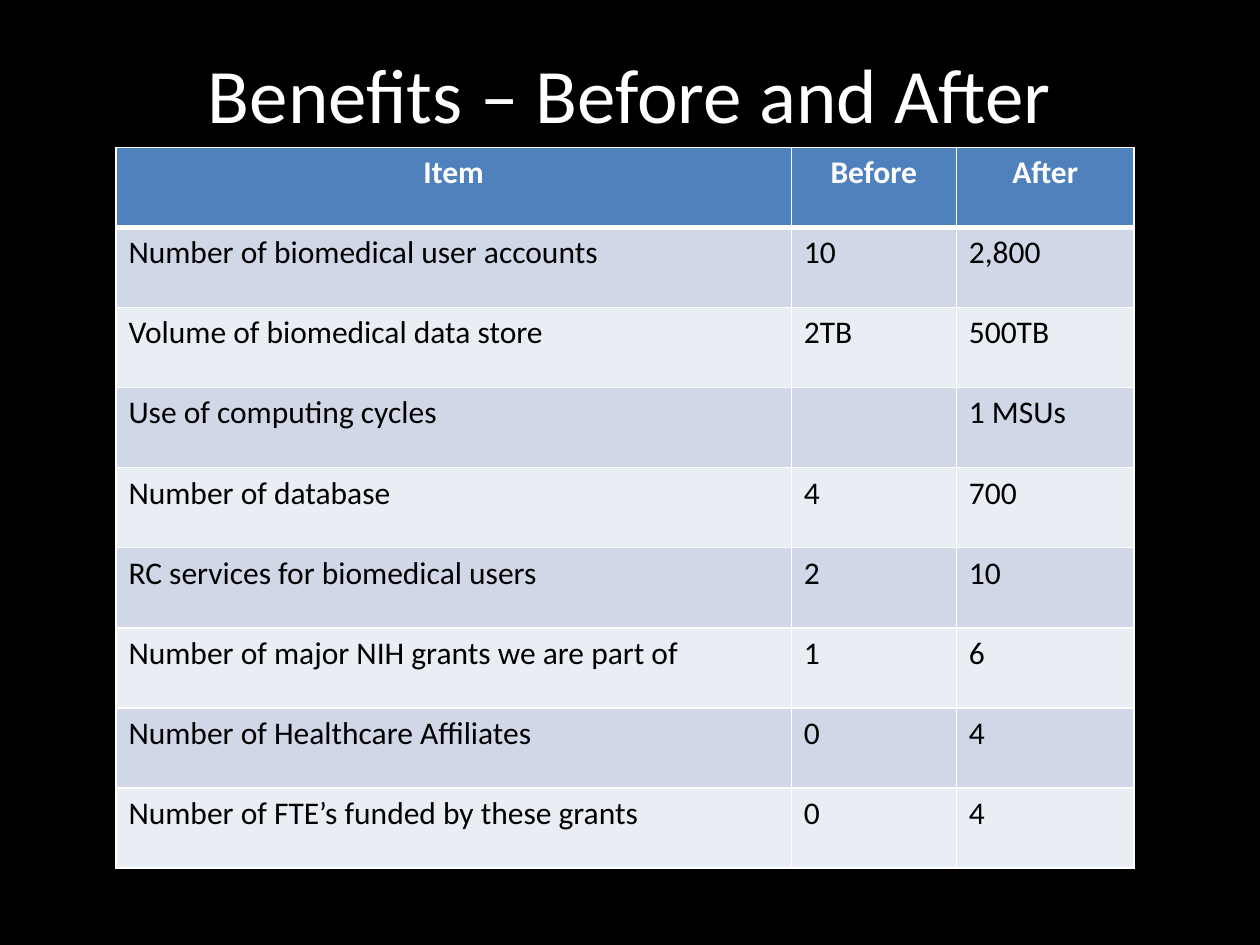
from pptx import Presentation
from pptx.dml.color import RGBColor
from pptx.enum.text import MSO_ANCHOR, PP_ALIGN
from pptx.oxml.ns import qn
from pptx.util import Inches, Pt
from lxml import etree

CENTER, LEFT = PP_ALIGN.CENTER, PP_ALIGN.LEFT
TOP = MSO_ANCHOR.TOP

THEME = {
    "font": "Calibri",
    "title": 44, "body": 18,
    "back": "000000", "light": "FFFFFF", "dark": "000000",
    "head": "4F81BD", "bands": ("D0D8E8", "E9EDF4"),
    "thin": 1, "thick": 3,
}

ROWS = [
    ("Item", "Before", "After"),
    ("Number of biomedical user accounts", "10", "2,800"),
    ("Volume of biomedical data store", "2TB", "500TB"),
    ("Use of computing cycles", "", "1 MSUs"),
    ("Number of database", "4", "700"),
    ("RC services for biomedical users", "2", "10"),
    ("Number of major NIH grants we are part of", "1", "6"),
    ("Number of Healthcare Affiliates", "0", "4"),
    ("Number of FTE’s funded by these grants", "0", "4"),
]


def write(frame, text, align, size, color, bold=False):
    para = frame.paragraphs[0]
    para.text = text
    para.alignment = align
    look = {"name": THEME["font"], "size": Pt(size), "bold": bold}
    for font in [para.font] + [run.font for run in para.runs]:
        for key, value in look.items():
            setattr(font, key, value)
        font.color.rgb = RGBColor.from_string(color)


def edge(cell, side, width):
    """Draw one cell border; side is L, R, T or B."""
    props = cell._tc.get_or_add_tcPr()
    line = etree.SubElement(props, qn(f"a:ln{side}"), w=str(Pt(width)))
    fill = etree.SubElement(line, qn("a:solidFill"))
    etree.SubElement(fill, qn("a:srgbClr"), val=THEME["light"])


deck = Presentation()
deck.slide_width, deck.slide_height = Inches(10), Inches(7.5)
unit = deck.slide_width // 1000  # grid of 1000 columns and 750 rows
slide = deck.slides.add_slide(deck.slide_layouts[6])
slide.background.fill.solid()
slide.background.fill.fore_color.rgb = RGBColor.from_string(THEME["back"])

# Title
box = slide.shapes.add_textbox(50 * unit, 30 * unit, 900 * unit, 125 * unit)
frame = box.text_frame
for key, value in {"word_wrap": True, "vertical_anchor": TOP,
                   "margin_top": 7 * unit}.items():
    setattr(frame, key, value)
write(frame, "Benefits – Before and After", CENTER,
      THEME["title"], THEME["light"])

# Table
widths = (536, 131, 141)
table = slide.shapes.add_table(
    len(ROWS), len(widths), 92 * unit, 117 * unit,
    sum(widths) * unit, 572 * unit).table
for col, width in zip(table.columns, widths):
    col.width = width * unit

for r, row in enumerate(ROWS):
    head = r == 0
    tint = THEME["head"] if head else THEME["bands"][(r - 1) % 2]
    ink = THEME["light"] if head else THEME["dark"]
    for c, text in enumerate(row):
        cell = table.cell(r, c)
        write(cell.text_frame, text, CENTER if head else LEFT,
              THEME["body"], ink, head)
        heavy = {0: "B", 1: "T"}.get(r)
        for side in "LRTB":
            edge(cell, side, THEME["thick" if side == heavy else "thin"])
        cell.fill.solid()
        cell.fill.fore_color.rgb = RGBColor.from_string(tint)

deck.save("out.pptx")
